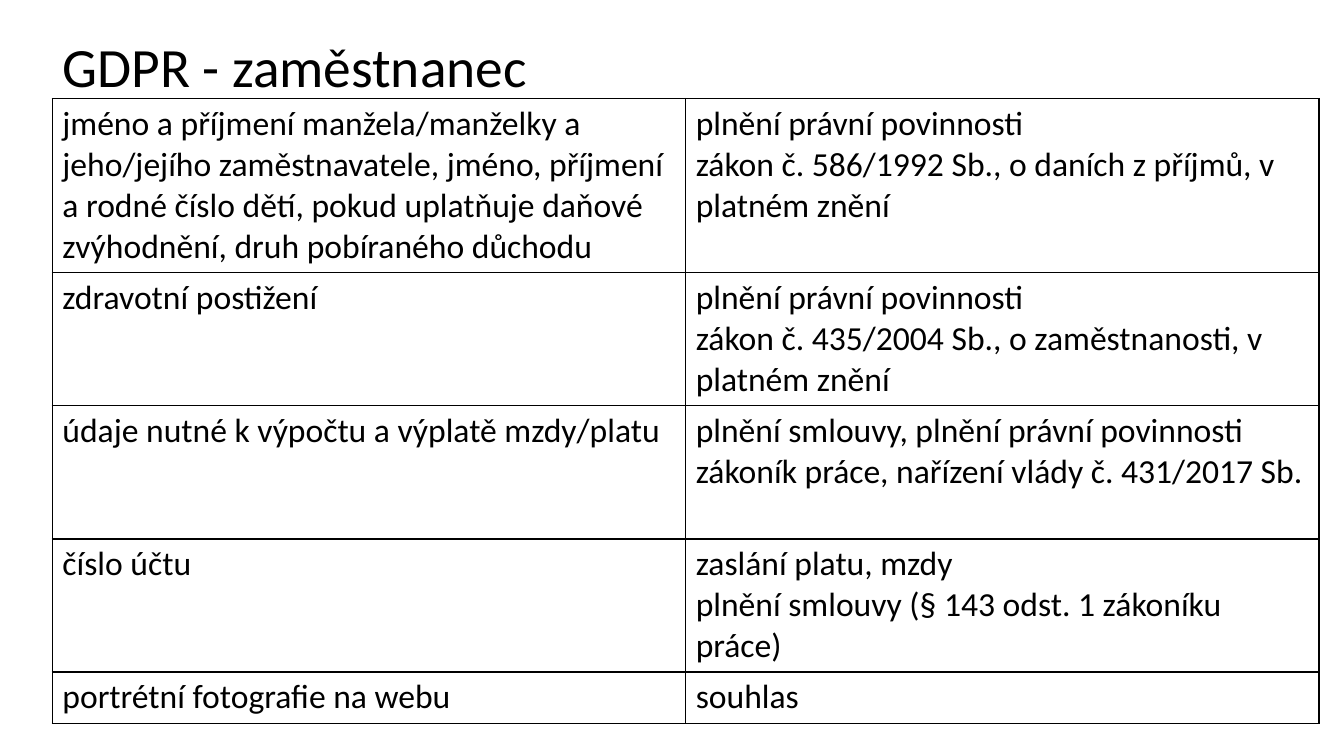
from lxml.etree import SubElement
from pptx import Presentation
from pptx.dml.color import RGBColor
from pptx.enum.text import MSO_ANCHOR, PP_ALIGN
from pptx.oxml.ns import qn
from pptx.util import Pt

COLORS = {"text": "000000", "border": "000000"}
FONT = "Calibri"
LINE_HEIGHT = 29.3
CELL_PADDING = 7.2

# Personal data, legal grounds, number of lines the row is tall
ROWS = [
    ("jméno a příjmení manžela/manželky a jeho/jejího zaměstnavatele, jméno, "
     "příjmení a rodné číslo dětí, pokud uplatňuje daňové zvýhodnění, "
     "druh pobíraného důchodu",
     "plnění právní povinnosti\n"
     "zákon č. 586/1992 Sb., o daních z příjmů, v platném znění", 4),
    ("zdravotní postižení",
     "plnění právní povinnosti\n"
     "zákon č. 435/2004 Sb., o zaměstnanosti, v platném znění", 3),
    ("údaje nutné k výpočtu a výplatě mzdy/platu",
     "plnění smlouvy, plnění právní povinnosti\n"
     "zákoník práce, nařízení vlády č. 431/2017 Sb.", 3),
    ("číslo účtu",
     "zaslání platu, mzdy\n"
     "plnění smlouvy (§ 143 odst. 1 zákoníku práce)", 3),
    ("portrétní fotografie na webu", "souhlas", 1),
]


def format_paragraph(para, size):
    para.alignment = PP_ALIGN.LEFT
    para.font.name = FONT
    para.font.size = Pt(size)
    para.font.bold = False
    para.font.color.rgb = RGBColor.from_string(COLORS["text"])


def set_borders(cell, width):
    properties = cell._tc.get_or_add_tcPr()
    for index, side in enumerate(("lnL", "lnR", "lnT", "lnB")):
        line = properties.makeelement(qn(f"a:{side}"), {"w": str(Pt(width))})
        fill = SubElement(line, qn("a:solidFill"))
        SubElement(fill, qn("a:srgbClr"), val=COLORS["border"])
        properties.insert(index, line)


def add_title(page, left, top, width, height):
    title = page.shapes.title
    title.left, title.top = Pt(left), Pt(top)
    title.width, title.height = Pt(width), Pt(height)
    frame = title.text_frame
    frame.text = "GDPR - zaměstnanec"
    frame.vertical_anchor = MSO_ANCHOR.MIDDLE
    para = frame.paragraphs[0]
    para.line_spacing = 0.9
    format_paragraph(para, 39.6)


def add_data_table(page, left, top, width):
    heights = [lines * LINE_HEIGHT + CELL_PADDING for *_, lines in ROWS]
    frame = page.shapes.add_table(len(ROWS), 2, Pt(left), Pt(top),
                                  Pt(width), Pt(sum(heights)))
    table = frame.table
    table.first_row = table.horz_banding = False
    for row, height, (*texts, _) in zip(table.rows, heights, ROWS):
        row.height = Pt(height)
        for cell, text in zip(row.cells, texts):
            cell.text = text
            cell.fill.background()
            set_borders(cell, 1)
            for para in cell.text_frame.paragraphs:
                format_paragraph(para, 24)


def main():
    deck = Presentation()
    deck.slide_width, deck.slide_height = Pt(960), Pt(540)
    page = deck.slides.add_slide(deck.slide_layouts[5])
    add_title(page, 37.4, 28.8, 856.8, 41.8)
    add_data_table(page, 37.4, 70.4, 904.8)
    deck.save("out.pptx")


if __name__ == "__main__":
    main()
